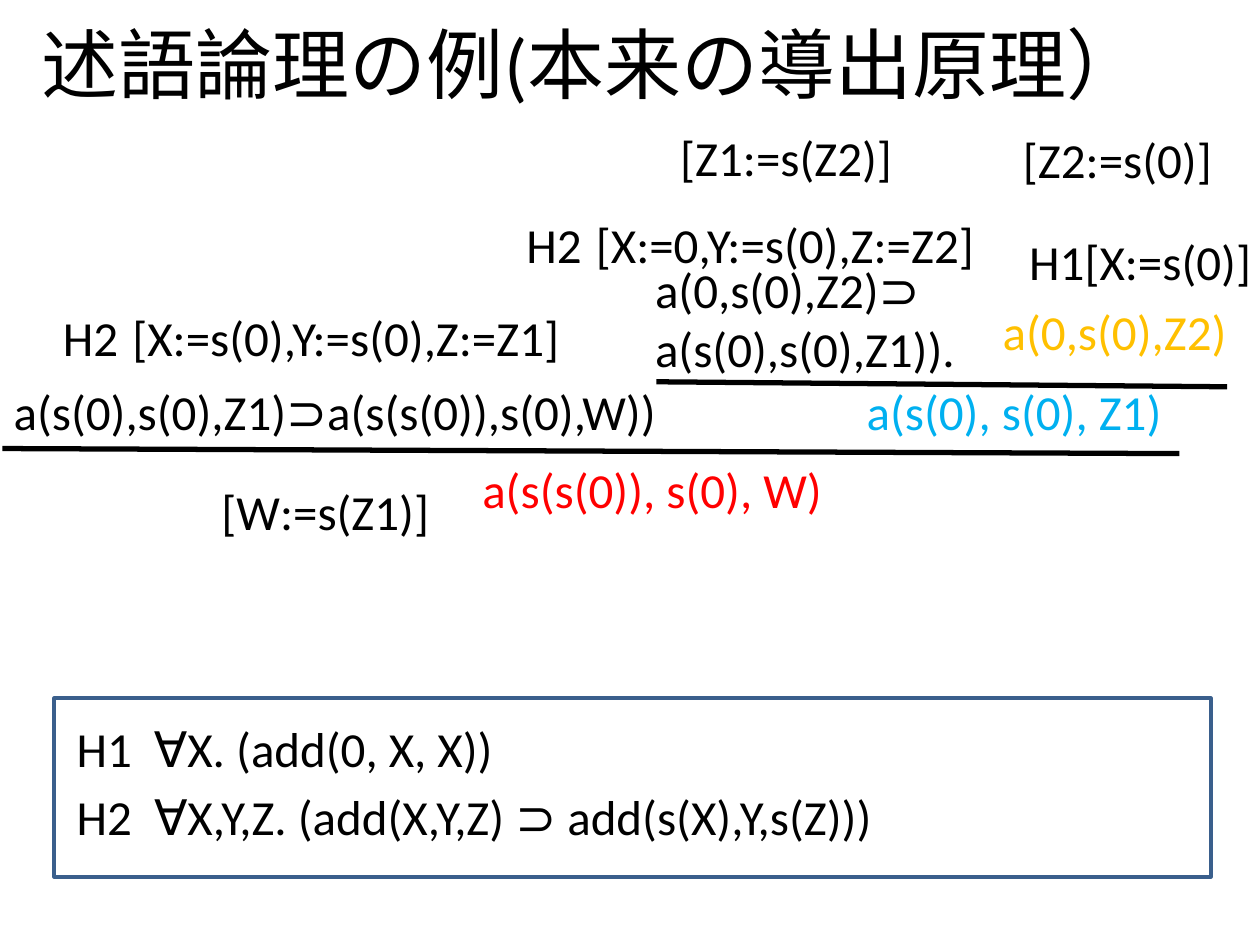
import dataclasses

import pptx
import pptx.dml.color
import pptx.enum.shapes
import pptx.enum.text
import pptx.oxml.ns
import pptx.util
from lxml import etree

Inches = pptx.util.Inches
Pt = pptx.util.Pt


@dataclasses.dataclass(frozen=True)
class Theme:
    font: str = "Calibri"
    ink: str = "000000"
    goal: str = "FF0000"
    lemma: str = "00B0F0"
    premise: str = "FFC000"
    frame: str = "3A5F8C"
    title_size: int = 44
    body_size: int = 28
    gap_size: int = 36
    rule_width: int = 3
    frame_width: int = 2


THEME = Theme()


def rgb(color):
    return pptx.dml.color.RGBColor.from_string(color)


def write_text(paragraph, text, *, size=THEME.body_size, color=THEME.ink, align=None):
    run = paragraph.add_run()
    run.text = text
    run.font.name = THEME.font
    run.font.size = Pt(size)
    run.font.color.rgb = rgb(color)
    if align is not None:
        paragraph.alignment = align


def add_title(slide, text):
    title = slide.shapes.title
    title.left, title.top = Inches(0), Inches(0)
    title.width, title.height = Inches(9.41), Inches(0.99)
    title.text_frame.vertical_anchor = pptx.enum.text.MSO_ANCHOR.MIDDLE
    write_text(title.text_frame.paragraphs[0], text, size=THEME.title_size,
               align=pptx.enum.text.PP_ALIGN.CENTER)


def add_text_frame(slide, left, top, width, height):
    box = slide.shapes.add_textbox(Inches(left), Inches(top), Inches(width), Inches(height))
    box.text_frame.word_wrap = False
    box.text_frame.auto_size = pptx.enum.text.MSO_AUTO_SIZE.SHAPE_TO_FIT_TEXT
    return box.text_frame


def add_formula(slide, left, top, width, *lines, color=THEME.ink):
    frame = add_text_frame(slide, left, top, width, 0.1 + 0.47 * len(lines))
    for index, line in enumerate(lines):
        paragraph = frame.add_paragraph() if index else frame.paragraphs[0]
        write_text(paragraph, line, color=color)


def add_instance(slide, left, top, width, axiom, substitution):
    paragraph = add_text_frame(slide, left, top, width, 0.71).paragraphs[0]
    write_text(paragraph, axiom)
    write_text(paragraph, " ", size=THEME.gap_size)
    write_text(paragraph, substitution)


def add_inference_rule(slide, left, top, right, bottom):
    rule = slide.shapes.add_connector(
        pptx.enum.shapes.MSO_CONNECTOR.STRAIGHT,
        Inches(left), Inches(top), Inches(right), Inches(bottom))
    rule.line.color.rgb = rgb(THEME.ink)
    rule.line.width = Pt(THEME.rule_width)
    etree.SubElement(rule._element.spPr, pptx.oxml.ns.qn("a:effectLst"))


def add_axiom_frame(slide, left, top, width, height):
    frame = slide.shapes.add_shape(
        pptx.enum.shapes.MSO_SHAPE.RECTANGLE,
        Inches(left), Inches(top), Inches(width), Inches(height))
    frame.shadow.inherit = False
    frame.fill.background()
    frame.line.color.rgb = rgb(THEME.frame)
    frame.line.width = Pt(THEME.frame_width)


def main():
    deck = pptx.Presentation()
    deck.slide_width, deck.slide_height = Inches(10), Inches(7.5)
    slide = deck.slides.add_slide(deck.slide_layouts.get_by_name("Title Only"))

    add_title(slide, "述語論理の例(本来の導出原理）")

    add_formula(slide, 0.51, 6.19, 6.78, "H2  ∀X,Y,Z. (add(X,Y,Z) ⊃ add(s(X),Y,s(Z)))")
    add_axiom_frame(slide, 0.43, 5.54, 9.18, 1.42)
    add_formula(slide, 0.51, 5.65, 3.67, "H1  ∀X. (add(0, X, X))")

    add_formula(slide, 3.73, 3.6, 3.03, "a(s(s(0)), s(0), W)", color=THEME.goal)
    add_formula(slide, 0.01, 2.98, 5.53, "a(s(0),s(0),Z1)⊃a(s(s(0)),s(0),W))")
    add_formula(slide, 6.78, 2.98, 2.57, "a(s(0), s(0), Z1)", color=THEME.lemma)
    add_inference_rule(slide, 0.02, 3.56, 9.36, 3.6)
    add_instance(slide, 0.4, 2.28, 4.32, "H2", "[X:=s(0),Y:=s(0),Z:=Z1]")
    add_formula(slide, 1.66, 3.77, 1.87, "[W:=s(Z1)]")

    add_formula(slide, 5.1, 2.01, 2.61, "a(0,s(0),Z2)⊃", "a(s(0),s(0),Z1)).")
    add_formula(slide, 7.86, 2.34, 2, "a(0,s(0),Z2)", color=THEME.premise)
    add_instance(slide, 4.08, 1.54, 3.8, "H2", "[X:=0,Y:=s(0),Z:=Z2]")
    add_formula(slide, 5.3, 0.96, 1.91, "[Z1:=s(Z2)]")
    add_formula(slide, 8.07, 1.79, 1.99, "H1[X:=s(0)]")
    add_formula(slide, 8.02, 0.98, 1.72, "[Z2:=s(0)]")
    add_inference_rule(slide, 5.21, 3.03, 9.74, 3.07)

    deck.save("out.pptx")


if __name__ == "__main__":
    main()
